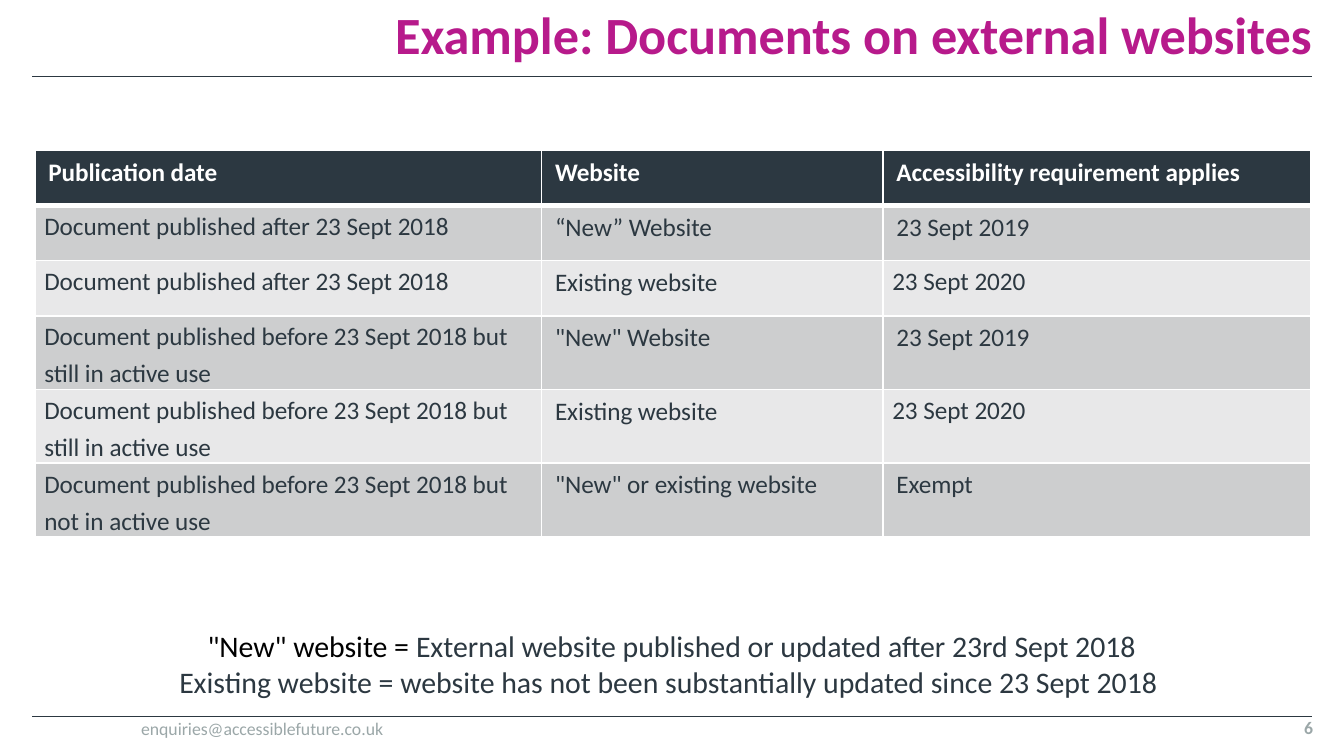
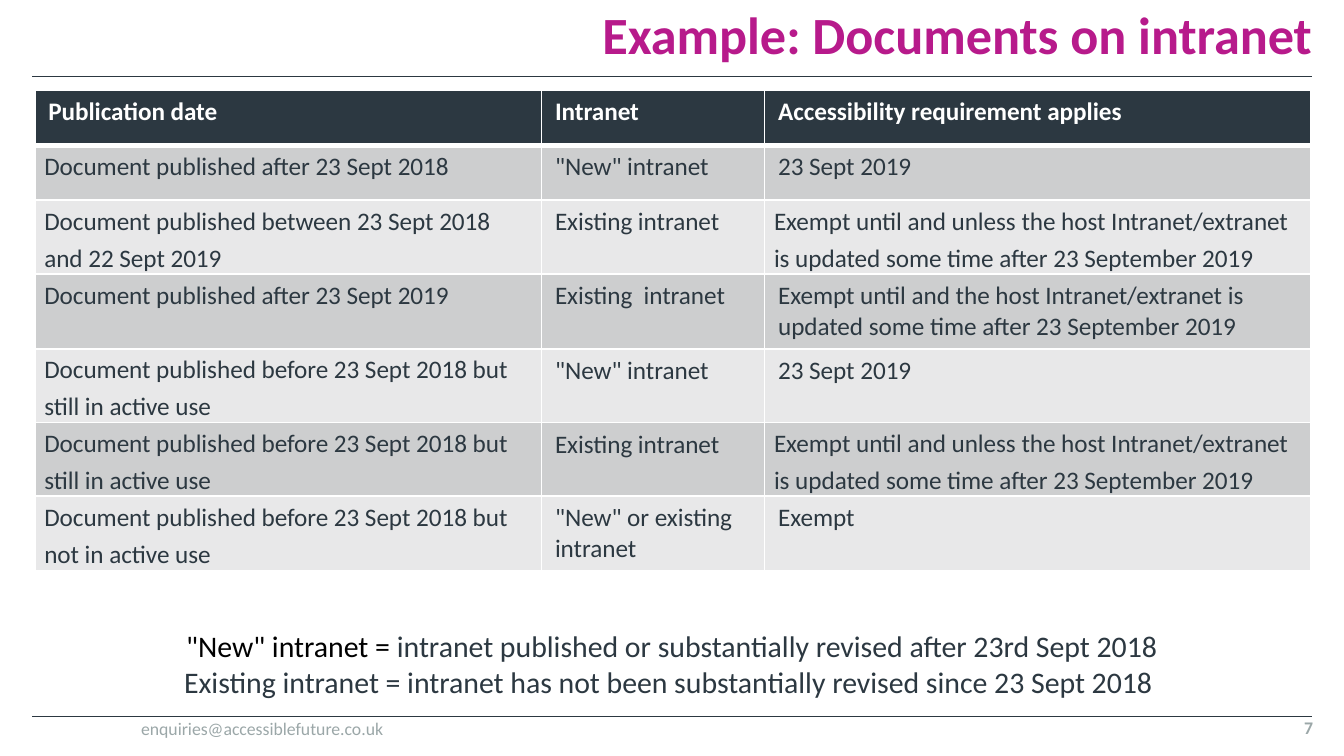
from dataclasses import dataclass
from lxml.etree import SubElement as Sub
from pptx import Presentation
from pptx.dml.color import RGBColor as Rgb
from pptx.enum.shapes import MSO_CONNECTOR as Conn, MSO_SHAPE as Form
from pptx.enum.text import MSO_ANCHOR as Anchor, MSO_AUTO_SIZE as Auto, PP_ALIGN as Align
from pptx.oxml.ns import qn
from pptx.util import Inches, Pt


@dataclass(frozen=True)
class Theme:
    face: str = "Calibri"
    ink: str = "2C3841"
    pink: str = "B71A8B"
    grey: str = "9BA7A8"
    white: str = "FFFFFF"
    black: str = "000000"
    bands: tuple = ("CDCECF", "E8E8E9")
    head: float = 28
    note: float = 16
    cell: float = 13.5
    foot: float = 9.5


LOOK = Theme()
MAIL = "enquiries@accessiblefuture.co.uk"
WIDE = (0.1, 0.05, 0.1, 0.05)
TIGHT = (0.07, 0, 0.07, 0)
NONE = (0, 0, 0, 0)
ROW = 0.41

AFTER = "Document published after 23 Sept 2018"
ACTIVE = "Document published before 23 Sept 2018 but still in active use"
IDLE = "Document published before 23 Sept 2018 but not in active use"
APPLY = "Accessibility requirement applies"
UNLESS = "Exempt until and unless the host Intranet/extranet is updated some time after 23 September 2019"

PAGES = [
    dict(
        title="Example: Documents on external websites", num=6,
        top=1.12, high=2.84, cols=(3.77, 2.54, 3.18), tight={2, 4},
        rows=[
            ("Publication date", "Website", APPLY),
            (AFTER, "“New” Website", "23 Sept 2019"),
            (AFTER, "Existing website", "23 Sept 2020"),
            (ACTIVE, '"New" Website', "23 Sept 2019"),
            (ACTIVE, "Existing website", "23 Sept 2020"),
            (IDLE, '"New" or existing website', "Exempt"),
        ],
        note=('"New" website = ',
              "External website published or updated after 23rd Sept 2018",
              "Existing website = website has not been substantially updated since 23 Sept 2018 "),
    ),
    dict(
        title="Example: Documents on intranet", num=7,
        top=0.67, high=3.73, cols=(3.77, 1.66, 4.06), tight={2, 5},
        rows=[
            ("Publication date", "Intranet", APPLY),
            (AFTER, '"New" intranet', "23 Sept 2019"),
            ("Document published between 23 Sept 2018 and 22 Sept 2019",
             "Existing intranet", UNLESS),
            ("Document published after 23 Sept 2019", "Existing  intranet",
             UNLESS.replace("and unless", "and")),
            (ACTIVE, '"New" intranet', "23 Sept 2019"),
            (ACTIVE, "Existing intranet", UNLESS),
            (IDLE, '"New" or existing intranet', "Exempt"),
        ],
        note=('"New" intranet = ',
              "intranet published or substantially revised after 23rd Sept 2018",
              "Existing intranet = intranet has not been substantially revised since 23 Sept 2018 "),
    ),
]


def put(item, **vals):
    for key, val in vals.items():
        setattr(item, key, val)


def inset(item, sides):
    names = ("margin_left", "margin_top", "margin_right", "margin_bottom")
    put(item, **{name: Inches(side) for name, side in zip(names, sides)})


def write(para, text, size, tint, bold=False):
    run = para.add_run()
    run.text = text
    put(run.font, name=LOOK.face, size=Pt(size), bold=bold)
    run.font.color.rgb = Rgb.from_string(tint)


def paint(fill, tint):
    fill.solid()
    fill.fore_color.rgb = Rgb.from_string(tint)


def rule(slide, left, top, width):
    line = slide.shapes.add_connector(
        Conn.STRAIGHT, *map(Inches, (left, top, left + width, top)))
    line.line.width = Pt(0.5)
    line.line.color.rgb = Rgb.from_string(LOOK.ink)
    Sub(line.element.spPr, qn("a:effectLst"))


def header(slide, box, text):
    title = slide.shapes.title
    put(title, **dict(zip(("left", "top", "width", "height"), map(Inches, box))))
    frame = title.text_frame
    put(frame, word_wrap=True, auto_size=Auto.NONE, vertical_anchor=Anchor.BOTTOM)
    inset(frame, NONE)
    para = frame.paragraphs[0]
    put(para, alignment=Align.RIGHT, line_spacing=0.9)
    write(para, text, LOOK.head, LOOK.pink, True)


def edge(cell, row):
    props = cell._tc.get_or_add_tcPr()
    for side in "LRTB":
        thick = (row, side) in ((0, "B"), (1, "T"))
        line = Sub(props, qn("a:ln" + side), w=str(Pt(3 if thick else 1)))
        Sub(Sub(line, qn("a:solidFill")), qn("a:srgbClr"), val=LOOK.white)


def grid(slide, left, top, page):
    rows, cols = page["rows"], page["cols"]
    holder = slide.shapes.add_table(
        len(rows), len(cols), *map(Inches, (left, top, sum(cols), page["high"])))
    table = holder.table
    put(table, first_row=True, horz_banding=False)
    for col, width in zip(table.columns, cols):
        col.width = Inches(width)
    for i, texts in enumerate(rows):
        table.rows[i].height = Inches(ROW)
        for j, text in enumerate(texts):
            cell = table.cell(i, j)
            edge(cell, i)
            paint(cell.fill, LOOK.bands[(i - 1) % 2] if i else LOOK.ink)
            tight = i > 0 and (j == 0 or j == 2 and i in page["tight"])
            inset(cell, TIGHT if tight else WIDE)
            para = cell.text_frame.paragraphs[0]
            if tight:
                para.line_spacing = 1.2
            write(para, text, LOOK.cell, LOOK.ink if i else LOOK.white, i == 0)
    holder.height = Inches(page["high"])


def legend(slide, box, term, sense, last):
    shape = slide.shapes.add_shape(Form.RECTANGLE, *map(Inches, box))
    shape.shadow.inherit = False
    paint(shape.fill, LOOK.white)
    shape.line.fill.background()
    frame = shape.text_frame
    put(frame, word_wrap=True, vertical_anchor=Anchor.MIDDLE)
    first, second = frame.paragraphs[0], frame.add_paragraph()
    for para in (first, second):
        para.alignment = Align.CENTER
    write(first, term, LOOK.note, LOOK.black)
    write(first, sense, LOOK.note, LOOK.ink)
    write(second, last, LOOK.note, LOOK.ink)


def label(slide, box, text, sides, align, bold):
    frame = slide.shapes.add_textbox(*map(Inches, box)).text_frame
    frame.word_wrap = True
    inset(frame, sides)
    para = frame.paragraphs[0]
    para.alignment = align
    write(para, text, LOOK.foot, LOOK.grey, bold)


def footer(slide, left, top, num):
    label(slide, (left, top, 7.95, 0.18), MAIL, (0.03, 0.01, 0, 0), Align.LEFT, False)
    label(slide, (left + 7.96, top, 0.79, 0.18), str(num), NONE, Align.RIGHT, True)


def build(deck, page):
    slide = deck.slides.add_slide(deck.slide_layouts[5])
    for top in (0.57, 5.33):
        rule(slide, 0.24, top, 9.52)
    header(slide, (1.76, 0, 8, 0.49), page["title"])
    grid(slide, 0.26, page["top"], page)
    footer(slide, 1.02, 5.33, page["num"])
    legend(slide, (0.74, 4.67, 8.52, 0.53), *page["note"])


def main():
    deck = Presentation()
    put(deck, slide_width=Inches(10), slide_height=Inches(10 * 9 / 16))
    for page in PAGES:
        build(deck, page)
    deck.save("out.pptx")


if __name__ == "__main__":
    main()
